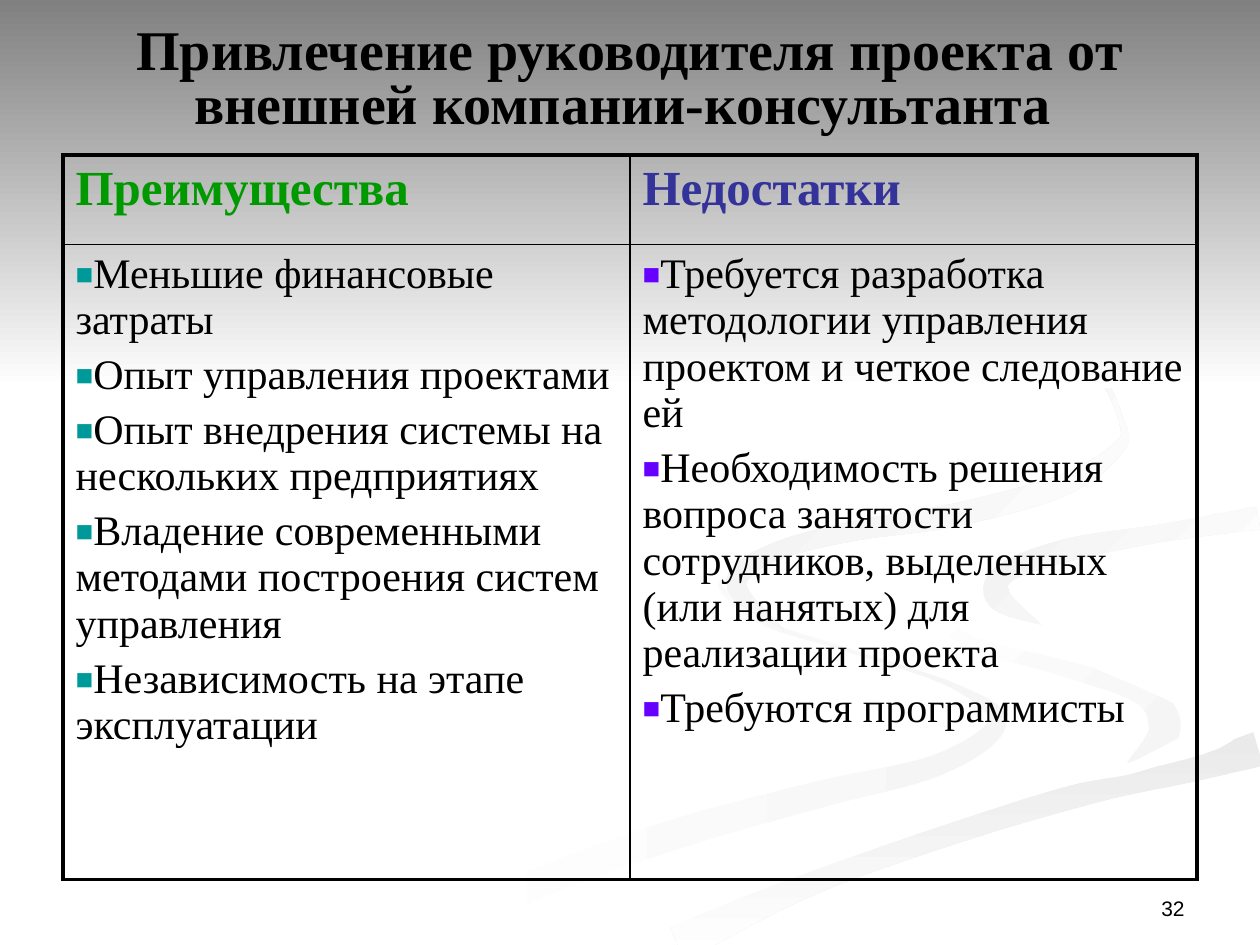
from math import hypot

from lxml import etree
from pptx import Presentation, util as u
from pptx.dml.color import RGBColor
from pptx.enum import shapes, text
from pptx.oxml.ns import qn

COLORS = {
    "ink": "000000", "paper": "FFFFFF", "sky": "808080",
    "mist": "F5F5F5", "shade": "EAEAEA", "edge": "F1F1F1", "wisp": "EDEDED",
    "pros": "009900", "pros_bullet": "009999",
    "cons": "333399", "cons_bullet": "6600FF",
}
SERIF, SANS = "Times New Roman", "Arial"

# Each ribbon follows a few stations: x, y of its middle line and its width there.
LEFT_STREAM = [(238, 539, 22), (302, 507, 17), (385, 477, 17), (468, 454, 15),
               (536, 437, 12), (570, 413, 10), (545, 392, 3), (486, 372, 2),
               (437, 356, 3), (413, 337, 3), (414, 330, 0)]
RIGHT_CURL = [(644, 436, 0), (665, 418, 18), (654, 397, 13), (608, 382, 9),
              (555, 367, 7), (527, 346, 3), (521, 334, 0)]
LOWER_BANK = [(387, 539, 22), (462, 505, 14), (547, 474, 15), (626, 452, 13),
              (677, 440, 15), (719, 428, 20)]
WHITE_RIVER = [(353, 539, 6), (425, 506, 12), (512, 476, 9), (605, 448, 5),
               (652, 437, 7), (700, 408, 22), (615, 371, 12), (545, 334, 36),
               (612, 302, 8), (719, 284, 11)]
UPPER_BANK = [(595, 357, 0), (571, 342, 14), (575, 327, 12), (612, 314, 13),
              (662, 305, 10), (719, 296, 13)]
TOP_CURL = [(448, 360, 0), (421, 335, 11), (439, 317, 10), (485, 304, 11),
            (547, 294, 13), (608, 277, 12), (639, 256, 7), (641, 241, 3),
            (626, 212, 3), (590, 189, 1), (549, 168, 0)]

# Stations, start colour, end colour, clockwise gradient angle; back to front
RIBBONS = [
    (LEFT_STREAM, "paper", "mist", 0),
    (RIGHT_CURL, "paper", "mist", 45),
    (LOWER_BANK, "shade", "paper", 90),
    (WHITE_RIVER, "paper", "paper", 0),
    (UPPER_BANK, "edge", "paper", 45),
    (TOP_CURL, "wisp", "paper", 45),
]

PROS = [
    "Меньшие финансовые затраты",
    "Опыт управления проектами",
    "Опыт внедрения системы на нескольких предприятиях",
    "Владение современными методами построения систем управления",
    "Независимость на этапе эксплуатации",
]
CONS = [
    "Требуется разработка методологии управления проектом и четкое следование ей",
    "Необходимость решения вопроса занятости сотрудников, выделенных "
    "(или нанятых) для реализации проекта",
    "Требуются программисты",
]


def rgb(color):
    return RGBColor.from_string(COLORS[color])


def smooth(stations, steps=8):
    """Pass a Catmull-Rom curve through the stations, widths included."""
    padded = [stations[0], *stations, stations[-1]]
    curve = []
    for window in zip(padded, padded[1:], padded[2:], padded[3:]):
        for step in range(steps):
            t = step / steps
            curve.append(tuple(
                b + t * (c - a) / 2
                + t * t * (2 * a - 5 * b + 4 * c - d) / 2
                + t ** 3 * (3 * b - a - 3 * c + d) / 2
                for a, b, c, d in zip(*window)))
    return curve + [stations[-1]]


def band(stations):
    """Outline of a ribbon: out along one side of the curve, back along the other."""
    curve = smooth(stations)
    one_side, other_side = [], []
    for before, (x, y, width), after in zip(
            curve[:1] + curve, curve, curve[1:] + curve[-1:]):
        dx, dy = after[0] - before[0], after[1] - before[1]
        reach = max(width, 0) / 2 / hypot(dx, dy)
        one_side.append((x - dy * reach, y + dx * reach))
        other_side.append((x + dy * reach, y - dx * reach))
    return one_side + other_side[::-1]


class SlideBuilder:
    thin, thick = 1, 2.25
    units_per_point = 10

    def __init__(self, slide):
        self.slide = slide

    def paint(self, shape, start, end, angle):
        shape.shadow.inherit = False
        shape.line.fill.background()
        if start == end:
            shape.fill.solid()
            shape.fill.fore_color.rgb = rgb(start)
            return
        shape.fill.gradient()
        shape.fill.gradient_angle = -angle % 360
        for stop, color in zip(shape.fill.gradient_stops, (start, end)):
            stop.color.rgb = rgb(color)

    def ribbon(self, stations, *gradient):
        outline = [(x * self.units_per_point, y * self.units_per_point)
                   for x, y in band(stations)]
        builder = self.slide.shapes.build_freeform(
            *outline[0], scale=u.Pt(1) / self.units_per_point)
        builder.add_line_segments(outline[1:], close=True)
        self.paint(builder.convert_to_shape(), *gradient)

    def panel(self, box, *gradient):
        shape = self.slide.shapes.add_shape(
            shapes.MSO_SHAPE.RECTANGLE, *map(u.Pt, box))
        self.paint(shape, *gradient)

    def run(self, paragraph, words, size, font=SERIF, color="ink", bold=False):
        run = paragraph.add_run()
        run.text = words
        run.font.size = u.Pt(size)
        run.font.name = font
        run.font.bold = bold
        run.font.color.rgb = rgb(color)

    def label(self, box, words, align, anchor, spacing=1.0, **style):
        frame = self.slide.shapes.add_textbox(*map(u.Pt, box)).text_frame
        frame.word_wrap = True
        frame.vertical_anchor = anchor
        paragraph = frame.paragraphs[0]
        paragraph.alignment = align
        paragraph.line_spacing = spacing
        self.run(paragraph, words, **style)

    def bullet(self, paragraph, color):
        props = paragraph._p.get_or_add_pPr()
        props.set("marL", "0")
        props.set("indent", "0")
        tint = etree.SubElement(props, qn("a:buClr"))
        etree.SubElement(tint, qn("a:srgbClr"), val=COLORS[color])
        etree.SubElement(props, qn("a:buSzPct"), val="70000")
        etree.SubElement(props, qn("a:buFont"), typeface=SANS)
        etree.SubElement(props, qn("a:buChar"), char="■")

    def borders(self, cell, widths):
        props = cell._tc.get_or_add_tcPr()
        for side, width in widths.items():
            line = etree.SubElement(props, qn(f"a:ln{side}"), w=str(u.Pt(width)))
            fill = etree.SubElement(line, qn("a:solidFill"))
            etree.SubElement(fill, qn("a:srgbClr"), val=COLORS["ink"])

    def cell(self, cell, lines, size, bullet=None, **style):
        frame = cell.text_frame
        for index, words in enumerate(lines):
            paragraph = frame.add_paragraph() if index else frame.paragraphs[0]
            paragraph.space_before = u.Pt(size * 0.2)
            if bullet:
                self.bullet(paragraph, bullet)
            self.run(paragraph, words, size, **style)

    def comparison(self, box, heights, columns):
        """Columns are (heading, heading colour, points, bullet colour)."""
        last_row, last_column = len(heights) - 1, len(columns) - 1
        table = self.slide.shapes.add_table(
            len(heights), len(columns), *map(u.Pt, box)).table
        table.first_row = table.horz_banding = False
        for row, height in zip(table.rows, heights):
            row.height = u.Pt(height)
        for c, (heading, color, points, bullet) in enumerate(columns):
            for r in range(len(heights)):
                outer = {"L": c == 0, "R": c == last_column,
                         "T": r == 0, "B": r == last_row}
                self.borders(table.cell(r, c), {
                    side: self.thick if is_outer else self.thin
                    for side, is_outer in outer.items()})
                table.cell(r, c).fill.background()
            self.cell(table.cell(0, c), [heading], 28, color=color, bold=True)
            self.cell(table.cell(1, c), points, 24, bullet)


def main():
    deck = Presentation()
    deck.slide_width, deck.slide_height = u.Pt(720), u.Pt(540)
    page = SlideBuilder(deck.slides.add_slide(deck.slide_layouts[6]))
    for ribbon in RIBBONS:
        page.ribbon(*ribbon)
    page.panel((0, 0, 720, 222), "sky", "paper", 90)
    page.label((516, 492, 168, 37.5), "32", text.PP_ALIGN.RIGHT,
               text.MSO_ANCHOR.BOTTOM, size=12, font=SANS)
    page.label((36, 21.6, 648, 49.7),
               "Привлечение руководителя проекта от внешней компании-консультанта ",
               text.PP_ALIGN.CENTER, text.MSO_ANCHOR.MIDDLE, 0.8, size=32, bold=True)
    page.comparison((36, 88.6, 648, 414), (51.1, 362.9), [
        ("Преимущества", "pros", PROS, "pros_bullet"),
        ("Недостатки", "cons", CONS, "cons_bullet"),
    ])
    deck.save("out.pptx")


if __name__ == "__main__":
    main()
